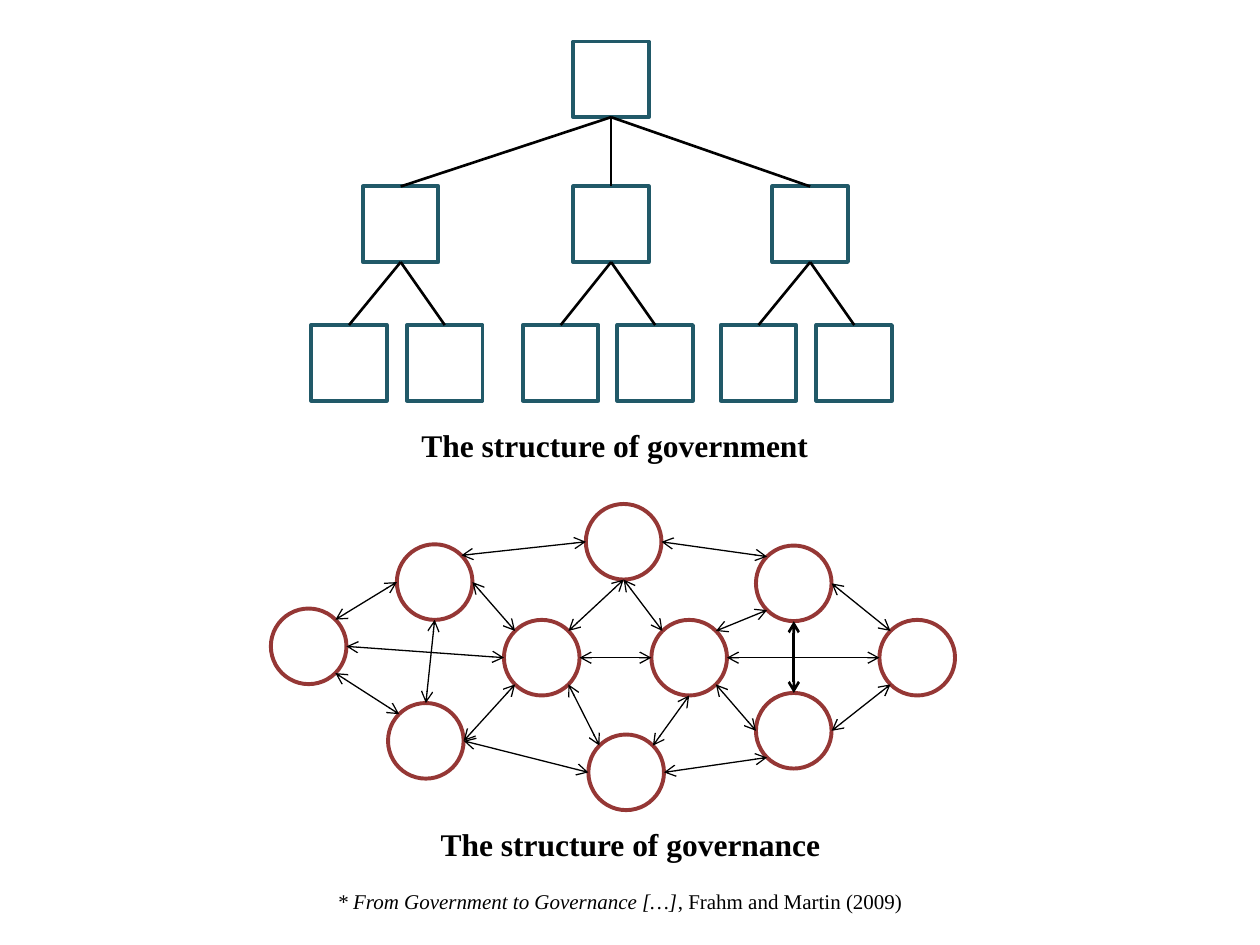
from math import sqrt

from lxml import etree
from pptx import Presentation
from pptx.dml.color import RGBColor
from pptx.enum import shapes, text
from pptx.oxml.ns import qn
from pptx.util import Inches, Pt

TEAL = RGBColor(0x21, 0x59, 0x68)
RED = RGBColor(0x95, 0x37, 0x35)
BLACK = RGBColor(0, 0, 0)
FONT = "Times New Roman"
SIZE = 0.6  # side of a square, diameter of a circle

# Hierarchy: left edges, and the top of each level
LEVEL_TOPS = (0.33, 1.48, 2.58)
ROOT_LEFT = 4.55
BRANCHES = [  # left edge of a unit, left edges of the units below it
    (2.88, (2.47, 3.23)),
    (4.55, (4.15, 4.9)),
    (6.13, (5.72, 6.48)),
]

# Network: left and top of each circle
CIRCLES = {
    "west": (2.15, 4.83),
    "upper west": (3.15, 4.32),
    "inner west": (4, 4.92),
    "lower west": (3.08, 5.58),
    "north": (4.65, 4),
    "south": (4.67, 5.83),
    "lower east": (6, 5.5),
    "upper east": (6, 4.33),
    "east": (6.98, 4.92),
    "inner east": (5.17, 4.92),
}
# Links: circle and compass side at each end
LINKS = [
    ("west", "NE", "upper west", "W"),
    ("upper west", "NE", "north", "W"),
    ("north", "E", "upper east", "NW"),
    ("upper east", "E", "east", "NW"),
    ("west", "SE", "lower west", "NW"),
    ("upper west", "S", "lower west", "N"),
    ("west", "E", "inner west", "W"),
    ("upper west", "E", "inner west", "NW"),
    ("inner west", "NE", "north", "S"),
    ("north", "S", "inner east", "NW"),
    ("inner west", "E", "inner east", "W"),
    ("inner east", "NE", "upper east", "SW"),
    ("upper east", "S", "lower east", "N"),
    ("inner east", "SE", "lower east", "W"),
    ("lower west", "E", "inner west", "SW"),
    ("lower west", "E", "south", "W"),
    ("inner west", "SE", "south", "NW"),
    ("south", "NE", "inner east", "S"),
    ("south", "E", "lower east", "SW"),
    ("lower east", "E", "east", "SW"),
    ("inner east", "E", "east", "W"),
]
HEAVY_LINK = ("upper east", "lower east")

CAPTIONS = [  # left, top, width, height, words
    (2.67, 6.5, 4.67, 0.4, "The structure of governance"),
    (3.17, 3.33, 3.42, 0.4, "The structure of government"),
]
CITATION = [("* From Government to Governance […]", True),
            (", Frahm and Martin (2009)", False)]


def add_node(page, kind, left, top, color):
    node = page.shapes.add_shape(kind, Inches(left), Inches(top),
                                 Inches(SIZE), Inches(SIZE))
    node.shadow.inherit = False
    node.fill.background()
    node.line.color.rgb = color
    node.line.width = Pt(2.25)


def add_line(page, start, end, width, arrows=False):
    line = page.shapes.add_connector(
        shapes.MSO_CONNECTOR.STRAIGHT, *(Inches(v) for v in (*start, *end)))
    line.line.color.rgb = BLACK
    line.line.width = Pt(width)
    properties = line._element.spPr
    if arrows:
        outline = properties.find(qn("a:ln"))
        for tag in ("a:headEnd", "a:tailEnd"):
            etree.SubElement(outline, qn(tag), type="arrow")
    etree.SubElement(properties, qn("a:effectLst"))


def add_text(page, place, spans, size, bold=False, align=text.PP_ALIGN.LEFT):
    box = page.shapes.add_textbox(*(Inches(v) for v in place))
    box.text_frame.word_wrap = True
    para = box.text_frame.paragraphs[0]
    para.alignment = align
    for words, italic in spans:
        span = para.add_run()
        span.text = words
        font = span.font
        font.name, font.size, font.color.rgb = FONT, Pt(size), BLACK
        font.bold, font.italic = bold, italic


def circle_point(name, side):
    """Point on a circle's edge in a compass direction."""
    left, top = CIRCLES[name]
    across = ("E" in side) - ("W" in side)
    down = ("S" in side) - ("N" in side)
    reach = SIZE / 2 / sqrt(across ** 2 + down ** 2)
    return left + SIZE / 2 + across * reach, top + SIZE / 2 + down * reach


def add_branch_line(page, level, parent, child, width=1.5):
    """Join the bottom of a square to the top of one on the next level."""
    add_line(page, (parent + SIZE / 2, LEVEL_TOPS[level] + SIZE),
             (child + SIZE / 2, LEVEL_TOPS[level + 1]), width)


def main():
    deck = Presentation()
    deck.slide_width, deck.slide_height = Inches(10), Inches(7.5)
    page = deck.slides.add_slide(deck.slide_layouts[6])

    # Government: squares, then lines
    units = [left for left, _ in BRANCHES]
    leaves = [left for _, below in BRANCHES for left in below]
    for top, lefts in zip(LEVEL_TOPS, ([ROOT_LEFT], units, leaves)):
        for left in lefts:
            add_node(page, shapes.MSO_SHAPE.RECTANGLE, left, top, TEAL)
    for unit, below in BRANCHES:
        add_branch_line(page, 0, ROOT_LEFT, unit,
                        0.75 if unit == ROOT_LEFT else 1.5)
        for leaf in below:
            add_branch_line(page, 1, unit, leaf)

    # Governance: circles, then two-way arrows
    for left, top in CIRCLES.values():
        add_node(page, shapes.MSO_SHAPE.OVAL, left, top, RED)
    for first, first_side, second, second_side in LINKS:
        add_line(page, circle_point(first, first_side),
                 circle_point(second, second_side),
                 1.5 if (first, second) == HEAVY_LINK else 0.75, arrows=True)

    # Captions and citation
    for *place, words in CAPTIONS:
        add_text(page, place, [(words, False)], 18, bold=True,
                 align=text.PP_ALIGN.CENTER)
    add_text(page, (2.58, 7, 4.83, 0.3), CITATION, 12)

    deck.save("out.pptx")


if __name__ == "__main__":
    main()
